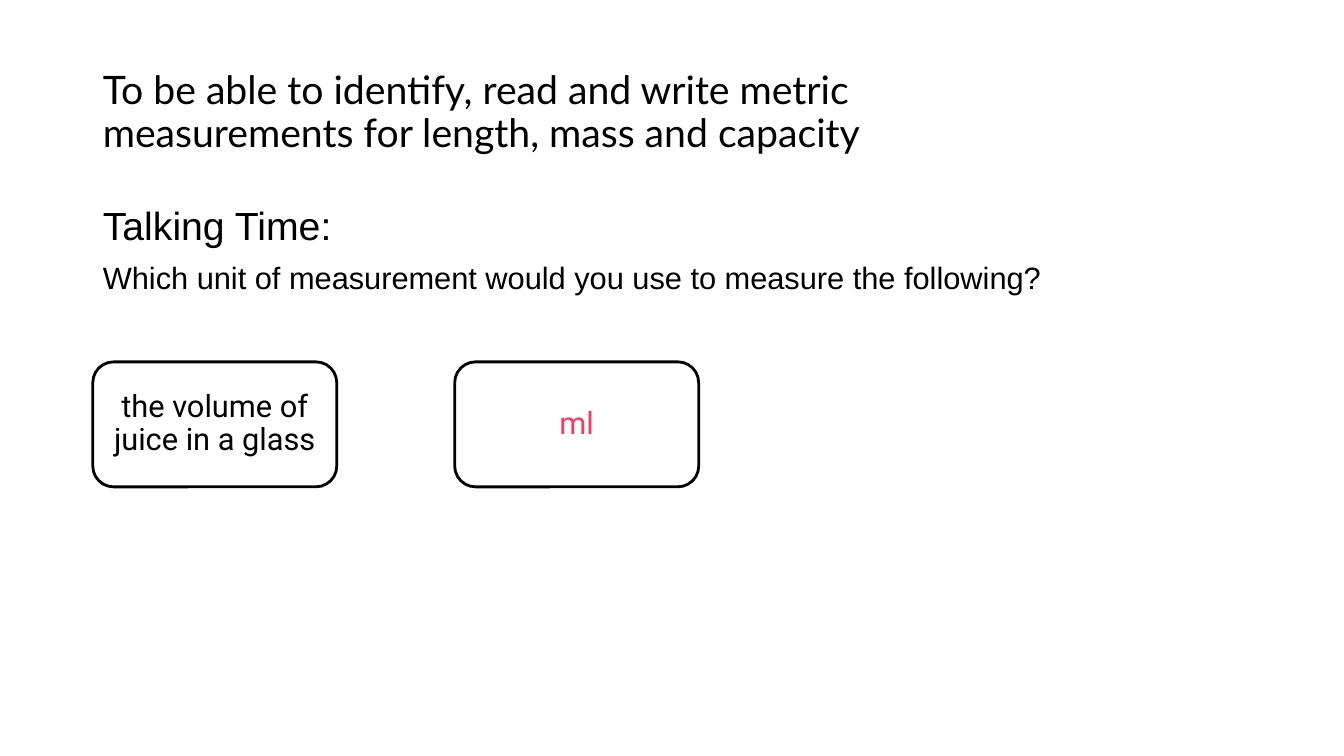
"""Build a measurement lesson slide with a question and its answer card."""
from dataclasses import dataclass

from pptx import Presentation
from pptx.dml.color import RGBColor
from pptx.enum.shapes import MSO_SHAPE
from pptx.enum.text import MSO_ANCHOR, MSO_AUTO_SIZE, PP_ALIGN
from pptx.oxml.xmlchemy import OxmlElement
from pptx.slide import Slide
from pptx.text.text import TextFrame, _Paragraph
from pptx.util import Inches, Pt

BLACK = RGBColor(0x00, 0x00, 0x00)
WHITE = RGBColor(0xFF, 0xFF, 0xFF)
PINK = RGBColor(0xFF, 0x38, 0x60)

LEFT = 0.92
CARD_TOP, CARD_WIDTH, CARD_HEIGHT, CARD_STEP = 3.59, 2.42, 1.24, 3.59


@dataclass
class Card:
    text: str
    color: RGBColor


CARDS = [Card("the volume of juice in a glass", BLACK), Card("ml", PINK)]


def write(para: _Paragraph, text: str, *, font: str, size: float,
          color: RGBColor = BLACK, align: PP_ALIGN = PP_ALIGN.LEFT,
          line_spacing: float = 0.9, space_before: float = 0) -> None:
    para.alignment = align
    para.line_spacing = line_spacing
    para.space_before = Pt(space_before)
    span = para.add_run()
    span.text = text
    span.font.name = font
    span.font.size = Pt(size)
    span.font.color.rgb = color


def prepare(frame: TextFrame, anchor: MSO_ANCHOR) -> None:
    frame.word_wrap = True
    frame.auto_size = MSO_AUTO_SIZE.NONE
    frame.vertical_anchor = anchor


def remove_bullet(para: _Paragraph) -> None:
    properties = para._p.get_or_add_pPr()
    properties.set("marL", "0")
    properties.set("indent", "0")
    properties.append(OxmlElement("a:buNone"))


def add_title(page: Slide) -> None:
    title = page.shapes.title
    title.left, title.top = Inches(LEFT), Inches(0.4)
    title.width, title.height = Inches(9.6), Inches(1.45)
    prepare(title.text_frame, MSO_ANCHOR.MIDDLE)
    write(title.text_frame.paragraphs[0],
          "To be able to identify, read and write metric measurements "
          "for length, mass and capacity",
          font="Lato", size=28)


def add_question(page: Slide) -> None:
    body = page.placeholders[1]
    body.left, body.top = Inches(LEFT), Inches(2)
    body.width, body.height = Inches(11.5), Inches(4.76)
    frame = body.text_frame
    prepare(frame, MSO_ANCHOR.TOP)
    heading, question = frame.paragraphs[0], frame.add_paragraph()
    for para in (heading, question):
        remove_bullet(para)
    write(heading, "Talking Time:", font="Arial", size=28)
    write(question,
          "Which unit of measurement would you use to measure the following?",
          font="Arial", size=22, space_before=10)


def add_card(page: Slide, card: Card, left: float) -> None:
    box = page.shapes.add_shape(
        MSO_SHAPE.ROUNDED_RECTANGLE, Inches(left), Inches(CARD_TOP),
        Inches(CARD_WIDTH), Inches(CARD_HEIGHT))
    box.shadow.inherit = False
    box.fill.solid()
    box.fill.fore_color.rgb = WHITE
    box.line.color.rgb = BLACK
    box.line.width = Pt(2)
    frame = box.text_frame
    prepare(frame, MSO_ANCHOR.MIDDLE)
    frame.margin_top = frame.margin_bottom = Inches(0)
    write(frame.paragraphs[0], card.text, font="Roboto", size=22,
          color=card.color, align=PP_ALIGN.CENTER)


def main() -> None:
    deck = Presentation()
    deck.slide_width, deck.slide_height = Inches(13.33), Inches(7.5)
    page = deck.slides.add_slide(deck.slide_layouts[1])
    add_title(page)
    add_question(page)
    for index, card in enumerate(CARDS):
        add_card(page, card, LEFT + index * CARD_STEP)
    deck.save("out.pptx")


if __name__ == "__main__":
    main()
